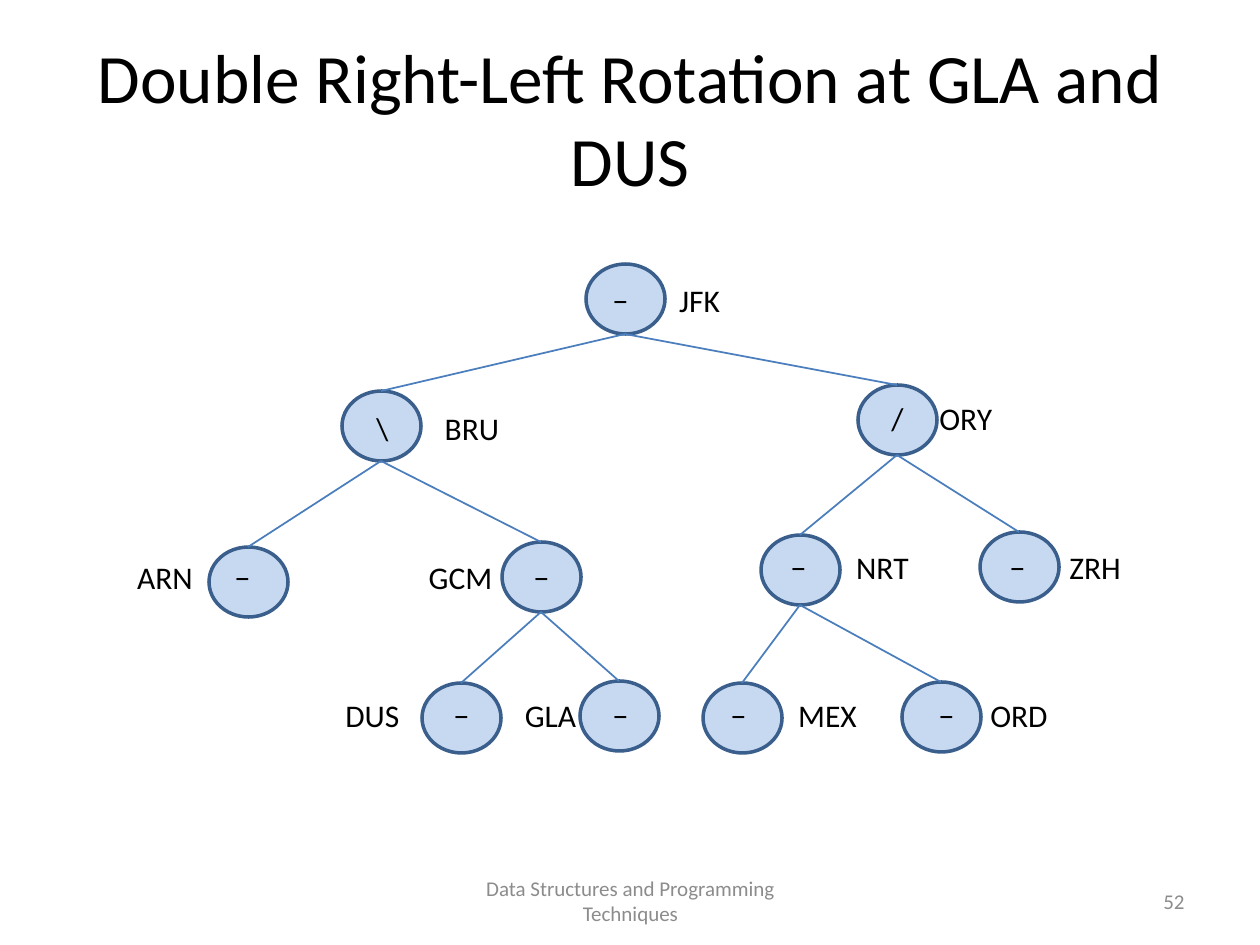
"""Build a slide showing an AVL tree after a double right-left rotation."""
from dataclasses import dataclass

from lxml import etree
from pptx import Presentation
from pptx.dml.color import RGBColor
from pptx.enum.shapes import MSO_CONNECTOR, MSO_SHAPE
from pptx.enum.text import MSO_ANCHOR, MSO_AUTO_SIZE, PP_ALIGN
from pptx.oxml.ns import qn
from pptx.slide import Slide
from pptx.text.text import TextFrame
from pptx.util import Pt

STRAIGHT = MSO_CONNECTOR.STRAIGHT
ELLIPSE = MSO_SHAPE.OVAL
TOP, MIDDLE = MSO_ANCHOR.TOP, MSO_ANCHOR.MIDDLE
LEFT, CENTER, RIGHT = PP_ALIGN.LEFT, PP_ALIGN.CENTER, PP_ALIGN.RIGHT
NO_FIT = MSO_AUTO_SIZE.NONE

EMU_PER_PX = 914400 / 126
NODE_WIDTH, NODE_HEIGHT = 79, 70
TEXT_HEIGHT = 50
TITLE_ONLY = 5


@dataclass(frozen=True)
class Theme:
    font: str = "Calibri"
    text: RGBColor = RGBColor(0x00, 0x00, 0x00)
    muted: RGBColor = RGBColor(0x8C, 0x8C, 0x8C)
    node_fill: RGBColor = RGBColor(0xC6, 0xD9, 0xF1)
    node_line: RGBColor = RGBColor(0x3A, 0x5F, 0x8C)
    edge: RGBColor = RGBColor(0x4B, 0x7E, 0xBC)
    title_size: float = 39.6
    label_size: float = 18
    footer_size: float = 12


@dataclass(frozen=True)
class Box:
    left: int
    top: int
    width: int
    height: int = TEXT_HEIGHT


@dataclass(frozen=True)
class Node:
    name: str
    left: int
    top: int
    text_top: int
    label_left: int
    label_width: int
    balance_left: int
    parent: str = ""
    balance: str = "−"
    align: PP_ALIGN = CENTER


THEME = Theme()
TREE = (
    Node("JFK", 586, 264, 275, 660, 79, 581),
    Node("BRU", 342, 391, 403, 422, 100, 343, "JFK", "\\"),
    Node("ORY", 858, 385, 393, 927, 79, 858, "JFK", "/", LEFT),
    Node("ARN", 209, 547, 552, 115, 100, 203, "BRU"),
    Node("GCM", 502, 542, 552, 412, 97, 502, "BRU"),
    Node("NRT", 761, 535, 542, 838, 89, 759, "ORY"),
    Node("ZRH", 980, 532, 542, 1057, 79, 978, "ORY", align=LEFT),
    Node("DUS", 422, 683, 690, 333, 79, 422, "GCM", align=LEFT),
    Node("GLA", 580, 681, 690, 502, 97, 581, "GCM"),
    Node("MEX", 703, 683, 690, 779, 97, 699, "NRT"),
    Node("ORD", 902, 682, 690, 978, 89, 907, "NRT", align=LEFT),
)


def px(length: int) -> int:
    return round(length * EMU_PER_PX)


def place(box: Box) -> tuple[int, int, int, int]:
    return px(box.left), px(box.top), px(box.width), px(box.height)


def write(frame: TextFrame, text: str, size: float, color: RGBColor,
          align: PP_ALIGN, anchor: MSO_ANCHOR) -> None:
    frame.word_wrap = True
    frame.auto_size = NO_FIT
    frame.vertical_anchor = anchor
    paragraph = frame.paragraphs[0]
    paragraph.alignment = align
    run = paragraph.add_run()
    run.text = text
    run.font.name = THEME.font
    run.font.size = Pt(size)
    run.font.color.rgb = color


def add_title(slide: Slide, text: str, box: Box) -> None:
    title = slide.shapes.title
    title.left, title.top, title.width, title.height = place(box)
    write(title.text_frame, text, THEME.title_size, THEME.text, CENTER, MIDDLE)


def add_label(slide: Slide, text: str, box: Box, align: PP_ALIGN = CENTER) -> None:
    frame = slide.shapes.add_textbox(*place(box)).text_frame
    write(frame, text, THEME.label_size, THEME.text, align, TOP)


def add_footer(slide: Slide, text: str, box: Box, align: PP_ALIGN) -> None:
    frame = slide.shapes.add_textbox(*place(box)).text_frame
    write(frame, text, THEME.footer_size, THEME.muted, align, MIDDLE)


def add_edge(slide: Slide, parent: Node, child: Node) -> None:
    half = NODE_WIDTH // 2
    edge = slide.shapes.add_connector(
        STRAIGHT, px(parent.left + half), px(parent.top + NODE_HEIGHT),
        px(child.left + half), px(child.top))
    edge.line.color.rgb = THEME.edge
    edge.line.width = Pt(1)
    etree.SubElement(edge._element.spPr, qn("a:effectLst"))


def add_node(slide: Slide, node: Node) -> None:
    box = Box(node.left, node.top, NODE_WIDTH, NODE_HEIGHT)
    shape = slide.shapes.add_shape(ELLIPSE, *place(box))
    shape.shadow.inherit = False
    shape.fill.solid()
    shape.fill.fore_color.rgb = THEME.node_fill
    shape.line.color.rgb = THEME.node_line
    shape.line.width = Pt(2)
    add_label(slide, node.balance, Box(node.balance_left, node.text_top, NODE_WIDTH))
    add_label(slide, node.name,
              Box(node.label_left, node.text_top, node.label_width), node.align)


def main() -> None:
    presentation = Presentation()
    presentation.slide_width, presentation.slide_height = px(1260), px(945)
    slide = presentation.slides.add_slide(presentation.slide_layouts[TITLE_ONLY])
    add_title(slide, "Double Right-Left Rotation at GLA and DUS", Box(63, 38, 1134, 158))
    nodes = {node.name: node for node in TREE}
    for node in TREE:
        add_node(slide, node)
    for node in TREE:
        if node.parent:
            add_edge(slide, nodes[node.parent], node)
    add_footer(slide, "Data Structures and Programming Techniques",
               Box(431, 876, 399), CENTER)
    add_footer(slide, "52", Box(903, 876, 294), RIGHT)
    presentation.save("out.pptx")


if __name__ == "__main__":
    main()
